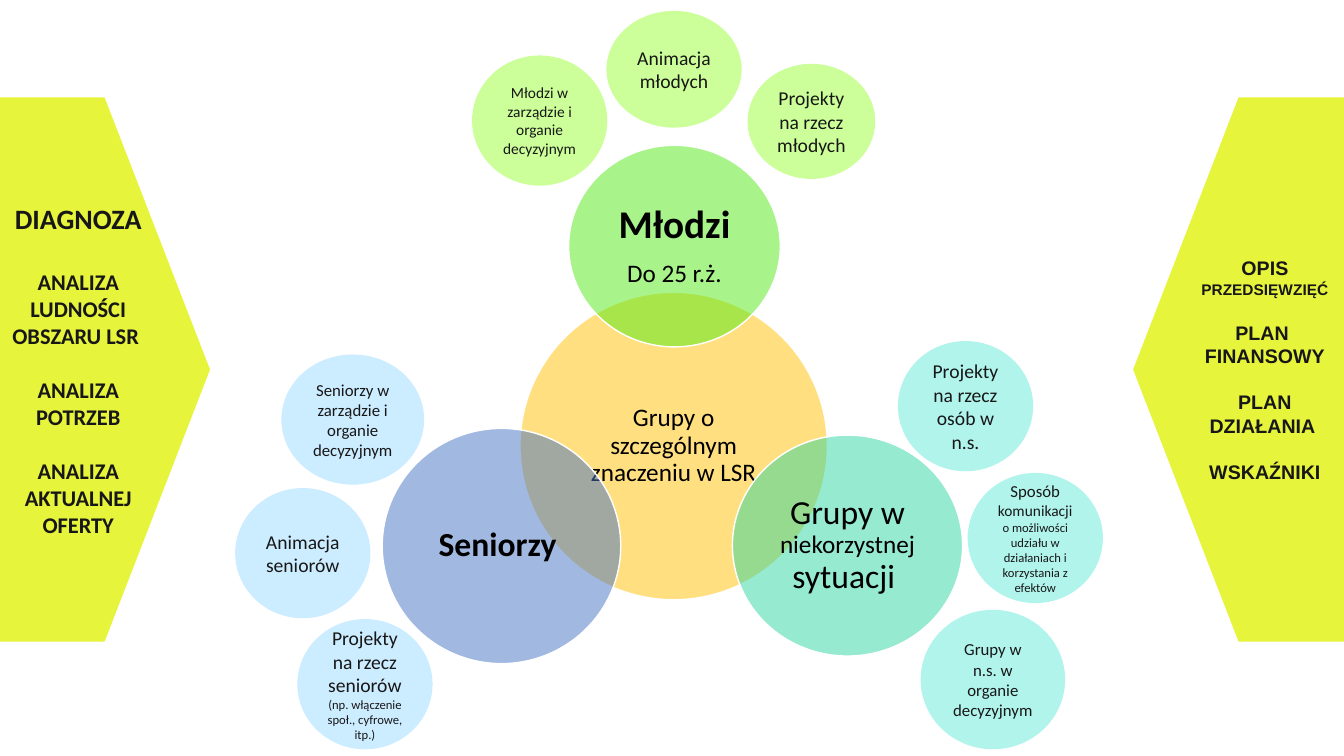
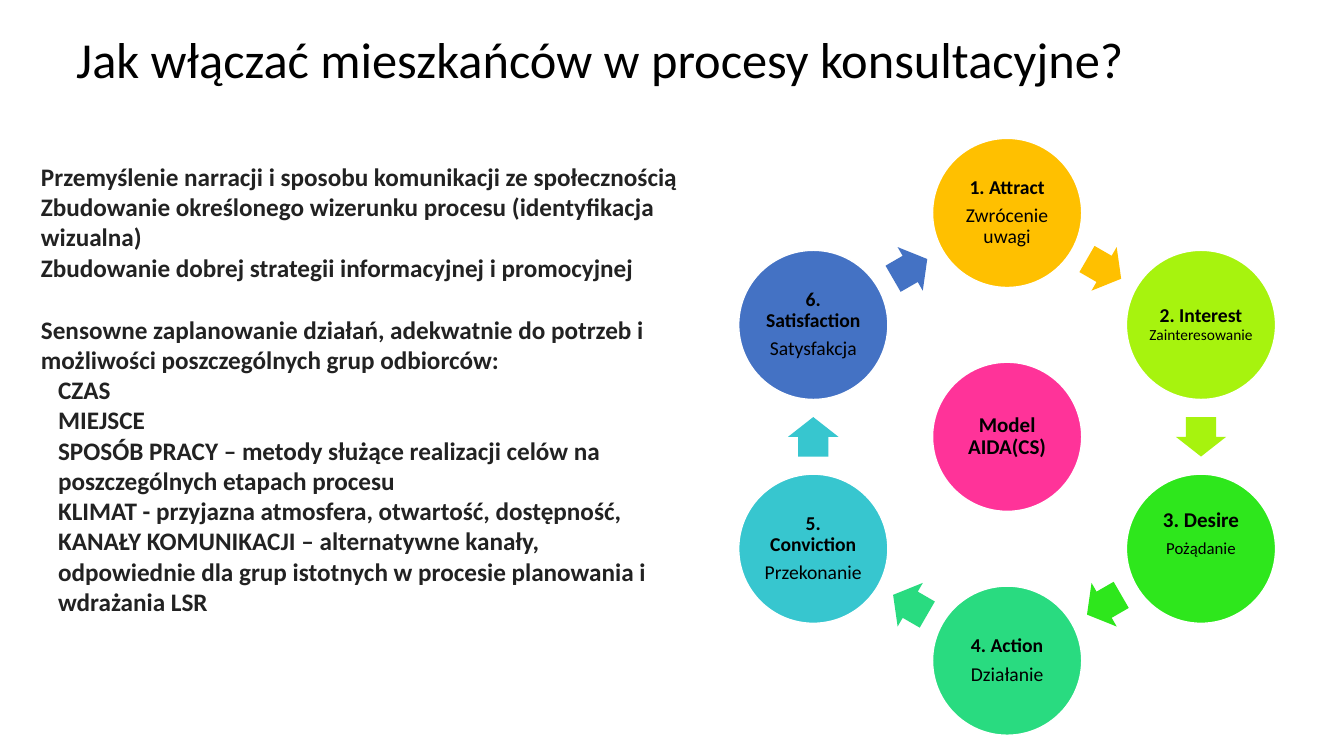
"""Two slides: priority groups of a local strategy, and the AIDA(CS) consultation cycle."""
from math import cos, radians, sin

from lxml import etree
from pptx import Presentation
from pptx import util as u
from pptx.dml.color import RGBColor
from pptx.enum import shapes, text
from pptx.oxml.ns import qn

CELL = u.Inches(1) // 12
COLUMNS, ROWS = 160, 90
COLORS = {
    "black": "000000", "ink": "181717", "body": "222222", "white": "FFFFFF",
    "plate": "E7F43C", "young_idea": "CCFF99", "senior_idea": "CCECFF", "group_idea": "99F1E7",
    "amber": "FFC000", "young": "53EB17", "group": "2ED7A1", "blue": "4472C4",
    "lime": "A7F30E", "green": "2EE71C", "mint": "29DB80", "teal": "37C6CF", "pink": "FF3399",
}
CENTER = text.PP_ALIGN.CENTER
MIDDLE = {"vertical_anchor": text.MSO_ANCHOR.MIDDLE}
NODE = {"line_spacing": 0.9, "alignment": CENTER}
PLAIN = {"alignment": CENTER}


def apply(target, values):
    """Set each attribute named in a dict of format values."""
    for name, value in values.items():
        setattr(target, name, value)


def padding(size, **overrides):
    """Return the four frame margins, in inches, as format values."""
    sides = dict.fromkeys(("left", "top", "right", "bottom"), size) | overrides
    return {f"margin_{side}": u.Inches(value) for side, value in sides.items()}


def place(grid):
    """Turn grid columns and rows into slide lengths."""
    return [u.Emu(round(cells * CELL)) for cells in grid]


def write(shape, paragraphs, color, frame=None, font="Calibri"):
    """Fill a shape with (runs, paragraph format) pairs; a run is (words, size, bold)."""
    box = shape.text_frame
    apply(box, {"word_wrap": True} | (frame or {}))
    for index, (runs, layout) in enumerate(paragraphs):
        paragraph = box.add_paragraph() if index else box.paragraphs[0]
        apply(paragraph, layout)
        for words, size, bold in runs:
            run = paragraph.add_run()
            run.text = words
            apply(run.font, {"name": font, "size": u.Pt(size), "bold": bold})
            run.font.color.rgb = RGBColor.from_string(COLORS[color])


def draw(slide, kind, grid, fill, opacity=100, outlined=False):
    """Add a flat preset shape on the grid."""
    shape = slide.shapes.add_shape(kind, *place(grid))
    shape.shadow.inherit = False
    shape.fill.solid()
    shape.fill.fore_color.rgb = RGBColor.from_string(COLORS[fill])
    if opacity < 100:
        tint = next(shape.fill._xPr.iter(qn("a:srgbClr")))
        etree.SubElement(tint, qn("a:alpha")).set("val", str(opacity * 1000))
    if outlined:
        shape.line.color.rgb = RGBColor.from_string(COLORS["white"])
        shape.line.width = u.Pt(1)
    else:
        shape.line.fill.background()
    return shape


def node(slide, grid, fill, lines, opacity=100, gap=0.35, frame=None):
    """Add an outlined circle whose lines are each one paragraph of runs."""
    circle = draw(slide, shapes.MSO_SHAPE.OVAL, grid, fill, opacity, True)
    paragraphs = [(runs, NODE | {"space_after": u.Pt(gap * runs[0][1])}) for runs in lines]
    write(circle, paragraphs, "black", MIDDLE | (frame or padding(0.02)))


def idea(slide, grid, fill, lines, opacity=100):
    """Add a small satellite circle."""
    circle = draw(slide, shapes.MSO_SHAPE.OVAL, grid, fill, opacity)
    write(circle, [([(*run, False) for run in runs], PLAIN) for runs in lines], "ink", MIDDLE)


def plate(slide, left, lines, font, mirrored=False):
    """Add a side arrow plate; each line is (runs, space before)."""
    arrow = draw(slide, shapes.MSO_SHAPE.PENTAGON, (left, 11.6, 25.1, 64.8), "plate")
    if mirrored:
        arrow._element.spPr.xfrm.set("flipH", "1")
    paragraphs = [([(*run, True) for run in runs], PLAIN | {"space_before": u.Pt(before)})
                  for runs, before in lines]
    write(arrow, paragraphs, "ink", MIDDLE, font)


def textbox(slide, grid, paragraphs, color, frame=None):
    """Add a wrapping text box on the grid."""
    write(slide.shapes.add_textbox(*place(grid)), paragraphs, color, frame)


def groups_slide(slide):
    """Build the overlapping groups, their ideas and the two side plates."""
    circles = [
        ((61.9, 34.8, 36.6, 36.6), "amber", [[("Grupy o szczególnym znaczeniu w LSR", 18, False)]]),
        ((67.7, 17.3, 25.2, 24), "young", [[("Młodzi", 28, True)], [("Do 25 r.ż.", 18, False)]]),
        ((87.2, 51.8, 27.4, 26.3), "group",
         [[("Grupy w ", 24, False), ("niekorzystnej ", 18, False), ("sytuacji ", 24, False)]]),
        ((45.5, 51, 28.4, 28), "blue", [[("Seniorzy ", 24, True)]]),
    ]
    for grid, fill, lines in circles:
        node(slide, grid, fill, lines, 50, frame=padding(0.04))

    plate(slide, -0.1, [
        ([("DIAGNOZA", 20)], 0),
        ([("ANALIZA LUDNOŚCI OBSZARU LSR ", 16)], 24),
        ([("ANALIZA POTRZEB", 16)], 19.5),
        ([("ANALIZA AKTUALNEJ OFERTY", 16)], 19.5),
    ], "Calibri")
    plate(slide, 134.9, [
        ([("OPIS ", 14), ("PRZEDSIĘWZIĘĆ", 11)], 0),
        ([("PLAN ", 14)], 16),
        ([("FINANSOWY", 14)], 0),
        ([("PLAN DZIAŁANIA ", 14)], 16),
        ([("WSKAŹNIKI", 14)], 16),
    ], "Arial", mirrored=True)

    usual = (16.1, 15.5)
    families = {
        ("young_idea", 100): [
            ((89, 7.6, 15.2, 13.7), [[("Projekty na rzecz młodych ", 14)]]),
            ((72.2, 1.3, 16.1, 13.9), [[("Animacja młodych", 14)]]),
            ((56.2, 6.6, *usual), [[("Młodzi w zarządzie i organie decyzyjnym", 11)]]),
        ],
        ("senior_idea", 100): [
            ((33.5, 42.2, 17, 15.5), [[("Seniorzy w zarządzie i organie decyzyjnym", 12)]]),
            ((28, 58.1, *usual), [[("Animacja seniorów", 14)]]),
            ((35.4, 73.7, *usual), [[("Projekty na rzecz seniorów ", 14),
                                     ("(np. włączenie społ., cyfrowe, itp.)", 9)]]),
        ],
        ("group_idea", 77): [
            ((106.9, 40.6, *usual), [[("Projekty na rzecz osób w n.s.", 14)]]),
            ((115.2, 56.3, *usual), [
                [("Sposób ", 12), ("komunikacji ", 11)],
                [("o możliwości udziału w działaniach i korzystania z efektów", 9)]]),
            ((109.6, 72.6, 17.2, 16.6), [[("Grupy w n.s. w organie decyzyjnym", 12)]]),
        ],
    }
    for (fill, opacity), ideas in families.items():
        for grid, lines in ideas:
            idea(slide, grid, fill, lines, opacity)


def cycle(slide, middle, radius, size):
    """Build the ring of steps, the arrows between them and the hub."""
    steps = [
        ("amber", "1. Attract", 14, "Zwrócenie uwagi", 14, {}),
        ("lime", "2. Interest", 14, "Zainteresowanie", 11, {"gap": 0, "frame": padding(0)}),
        ("green", "3. Desire", 15, "Pożądanie", 12, {"frame": padding(0.02, bottom=0.32)}),
        ("mint", "4. Action", 14, "Działanie", 14, {}),
        ("teal", "5. Conviction", 14, "Przekonanie", 14, {}),
        ("blue", "6. Satisfaction", 14, "Satysfakcja", 14, {}),
    ]
    turn = 360 / len(steps)

    def around(angle, distance, width, height):
        """Return the grid box centred at an angle clockwise from the top."""
        x = middle[0] + distance * sin(radians(angle))
        y = middle[1] - distance * cos(radians(angle))
        return x - width / 2, y - height / 2, width, height

    for index, (fill, name, name_size, meaning, meaning_size, options) in enumerate(steps):
        angle = index * turn
        node(slide, around(angle, radius, size, size), fill,
             [[(name, name_size, True)], [(meaning, meaning_size, False)]], **options)
        halfway = angle + turn / 2
        arrow = draw(slide, shapes.MSO_SHAPE.RIGHT_ARROW,
                     around(halfway, radius * cos(radians(turn / 2)), 4.7, 6), fill)
        arrow.adjustments[0], arrow.adjustments[1] = 0.6, 0.5
        arrow.rotation = halfway
    node(slide, around(0, 0, size, size), "pink", [[("Model AIDA(CS)", 15, True)]])


def consultation_slide(slide):
    """Build the title, the advice and the AIDA(CS) cycle."""
    textbox(slide, (7.9, 2.5, 138, 9.7),
            [([("Jak włączać mieszkańców w procesy konsultacyjne?", 36, False)],
              {"line_spacing": 0.9})], "black", MIDDLE)
    cycle(slide, (119.9, 52), 26.65, 17.76)

    principles = [
        "Przemyślenie narracji i sposobu komunikacji ze społecznością",
        "Zbudowanie określonego wizerunku procesu (identyfikacja wizualna)",
        "Zbudowanie dobrej strategii informacyjnej i promocyjnej",
    ]
    planning = ["Sensowne zaplanowanie działań, adekwatnie do potrzeb i możliwości "
                "poszczególnych grup odbiorców:"]
    needs = [
        "CZAS",
        "MIEJSCE",
        "SPOSÓB PRACY – metody służące realizacji celów na",
        "poszczególnych etapach procesu",
        "KLIMAT - przyjazna atmosfera, otwartość, dostępność,",
        "KANAŁY KOMUNIKACJI – alternatywne kanały,",
        "odpowiednie dla grup istotnych w procesie planowania i",
        "wdrażania LSR",
    ]

    def advice(lines, indent=0):
        """Return bold paragraphs with a left indent in inches."""
        result = []
        for words in lines:
            result.append(([(words, 18, True)], {"indent": indent}))
        return result

    blocks = [((3.7, 18.6, 81.6, 15.7), [(principles, 0)]),
              ((3.7, 36.8, 81.6, 37.6), [(planning, 0), (needs, 0.17)])]
    for grid, parts in blocks:
        box = slide.shapes.add_textbox(*place(grid))
        paragraphs = [item for lines, indent in parts for item in advice(lines, indent)]
        write(box, [(runs, {}) for runs, _ in paragraphs], "body")
        for paragraph, (_, layout) in zip(box.text_frame.paragraphs, paragraphs):
            paragraph._p.get_or_add_pPr().set("marL", str(u.Inches(layout["indent"])))


def main():
    """Build and save the presentation."""
    deck = Presentation()
    apply(deck, {"slide_width": u.Emu(COLUMNS * CELL), "slide_height": u.Emu(ROWS * CELL)})
    for build in (groups_slide, consultation_slide):
        build(deck.slides.add_slide(deck.slide_layouts[6]))
    deck.save("out.pptx")


if __name__ == "__main__":
    main()
